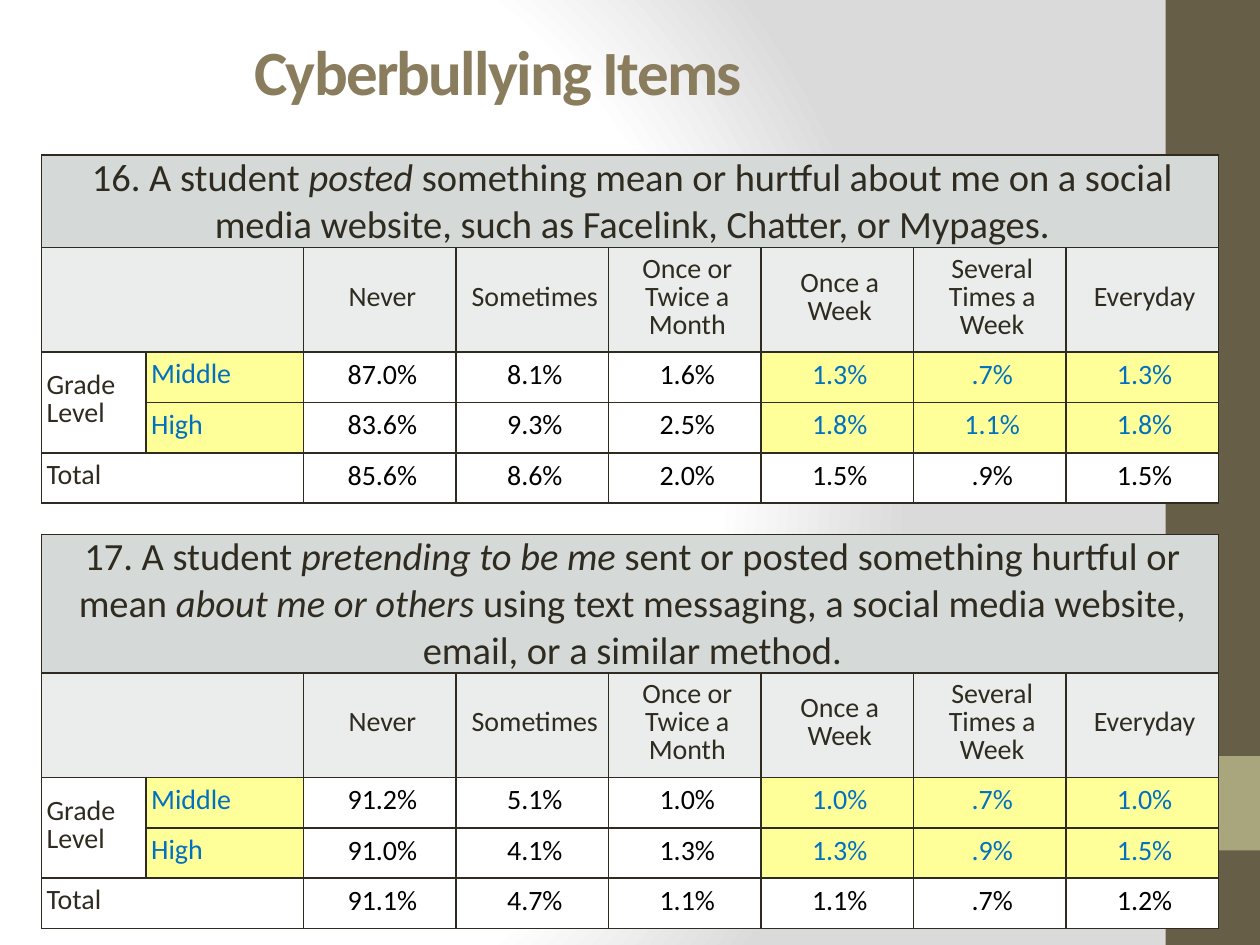
from dataclasses import dataclass
from typing import NamedTuple

from pptx import Presentation
from pptx.dml.color import RGBColor as Rgb
from pptx.enum.shapes import MSO_SHAPE as Shape
from pptx.enum.text import MSO_ANCHOR as Anchor, PP_ALIGN as Align
from pptx.oxml import parse_xml
from pptx.oxml.ns import nsdecls
from pptx.util import Inches, Pt


@dataclass(frozen=True)
class Theme:
    font: str = "Calibri"
    title_size: int = 36
    question_size: int = 22
    cell_size: int = 16
    ink: str = "2F2B20"
    black: str = "000000"
    blue: str = "0070C0"
    title: str = "897D5D"
    white: str = "FFFFFF"
    shade: str = "DADADA"
    yellow: str = "FFFF99"
    question_fill: str = "D5DAD8"
    header_fill: str = "EAEDEB"
    band: str = "675E47"
    accent: str = "A9A57C"


class Run(NamedTuple):
    text: str
    italic: bool = False


class Style(NamedTuple):
    fill: str
    color: str
    align: Align = Align.CENTER
    size: int = 16
    margin: float = 0
    fixed_lines: bool = True


class Survey(NamedTuple):
    top: float
    question_height: float
    question: list[Run]
    rates: list[list[str]]


THEME = Theme()
LEFT = 0.33
COLUMN_WIDTHS = [0.83, 1.25] + [1.21] * 6
BODY_HEIGHTS = [0.83, 0.4, 0.4, 0.4]
LABEL_COLUMNS = 2
FIRST_HIGHLIGHT = 3
FREQUENCIES = ["Never", "Sometimes", "Once or Twice a Month", "Once a Week",
               "Several Times a Week", "Everyday"]
QUESTION = Style(THEME.question_fill, THEME.ink, size=THEME.question_size, fixed_lines=False)
HEADER = Style(THEME.header_fill, THEME.ink)
LABEL = Style(THEME.white, THEME.ink, Align.LEFT)
GRADE = Style(THEME.yellow, THEME.blue, Align.LEFT)
RATE = Style(THEME.white, THEME.black, margin=0.01)
HIGHLIGHT = Style(THEME.yellow, THEME.blue, margin=0.01)

SURVEYS = [
    Survey(1.23, 0.72, [
        Run("16. A student "), Run("posted", True),
        Run(" something mean or hurtful about me on a social media website, "
            "such as Facelink, Chatter, or Mypages."),
    ], [
        ["87.0%", "8.1%", "1.6%", "1.3%", ".7%", "1.3%"],
        ["83.6%", "9.3%", "2.5%", "1.8%", "1.1%", "1.8%"],
        ["85.6%", "8.6%", "2.0%", "1.5%", ".9%", "1.5%"],
    ]),
    Survey(4.24, 1.09, [
        Run("17. A student "), Run("pretending to be me ", True),
        Run("sent or posted something hurtful or mean "), Run("about me or others ", True),
        Run("using text messaging, a social media website, email, or a similar method."),
    ], [
        ["91.2%", "5.1%", "1.0%", "1.0%", ".7%", "1.0%"],
        ["91.0%", "4.1%", "1.3%", "1.3%", ".9%", "1.5%"],
        ["91.1%", "4.7%", "1.1%", "1.1%", ".7%", "1.2%"],
    ]),
]


def set_background(slide) -> None:
    """Fill the slide with a circular gradient."""
    stops = "".join(
        f'<a:gs pos="{position}000"><a:srgbClr val="{color}"/></a:gs>'
        for position, color in [(0, THEME.white), (75, THEME.white), (100, THEME.shade)])
    slide.element.cSld.insert(0, parse_xml(
        f'<p:bg {nsdecls("p", "a")}><p:bgPr><a:gradFill rotWithShape="1"><a:gsLst>{stops}</a:gsLst>'
        '<a:path path="circle"><a:fillToRect l="20000" t="50000" r="100000" b="50000"/></a:path>'
        '</a:gradFill><a:effectLst/></p:bgPr></p:bg>'))


def add_block(slide, top: float, height: float, color: str) -> None:
    """Draw a plain rectangle in the right-hand band."""
    shape = slide.shapes.add_shape(
        Shape.RECTANGLE, Inches(9.25), Inches(top), Inches(0.75), Inches(height))
    shape.shadow.inherit = False
    shape.fill.solid()
    shape.fill.fore_color.rgb = Rgb.from_string(color)
    shape.line.fill.background()


def set_font(font, size: int, color: str) -> None:
    """Apply the theme font with a size and colour."""
    font.name = THEME.font
    font.size = Pt(size)
    font.color.rgb = Rgb.from_string(color)


def add_title(slide, text: str) -> None:
    """Write the slide title."""
    frame = slide.shapes.add_textbox(
        Inches(1.92), Inches(0.18), Inches(7.5), Inches(0.75)).text_frame
    frame.word_wrap = True
    frame.vertical_anchor = Anchor.MIDDLE
    paragraph = frame.paragraphs[0]
    run = paragraph.add_run()
    run.text = text
    set_font(paragraph.font, THEME.title_size, THEME.title)
    paragraph.font.bold = True
    run.font._element.set("spc", "-100")


def style_cell(cell, style: Style) -> None:
    """Give a cell its borders, fill and margins."""
    properties = cell._tc.get_or_add_tcPr()
    for side in ("lnL", "lnR", "lnT", "lnB"):
        properties.append(parse_xml(
            f'<a:{side} {nsdecls("a")} w="{Pt(1)}"><a:solidFill><a:srgbClr val="{THEME.ink}"/>'
            f'</a:solidFill></a:{side}>'))
    cell.fill.solid()
    cell.fill.fore_color.rgb = Rgb.from_string(style.fill)
    cell.vertical_anchor = Anchor.MIDDLE
    cell.margin_left = cell.margin_right = cell.margin_top = Inches(style.margin)
    cell.margin_bottom = 0


def write_cell(cell, runs: list[Run], style: Style) -> None:
    """Style a cell and write its runs."""
    style_cell(cell, style)
    paragraph = cell.text_frame.paragraphs[0]
    paragraph.alignment = style.align
    paragraph._p.get_or_add_pPr().set("marL", str(Inches(0.04)))
    if style.fixed_lines:
        paragraph.line_spacing = Pt(16)
    set_font(paragraph.font, style.size, style.color)
    for text, italic in runs:
        run = paragraph.add_run()
        run.text = text
        if italic:
            run.font.italic = True


def add_survey(slide, survey: Survey) -> None:
    """Draw one survey question with its table of rates."""
    heights = [survey.question_height] + BODY_HEIGHTS
    table = slide.shapes.add_table(
        len(heights), len(COLUMN_WIDTHS), Inches(LEFT), Inches(survey.top),
        Inches(sum(COLUMN_WIDTHS)), Inches(sum(heights))).table
    table.first_row = table.horz_banding = False
    for column, width in zip(table.columns, COLUMN_WIDTHS):
        column.width = Inches(width)
    for row, height in zip(table.rows, heights):
        row.height = Inches(height)

    labels = [
        [(survey.question, QUESTION)] + [([], QUESTION)] * 7,
        [([], HEADER)] * 2 + [([Run(name)], HEADER) for name in FREQUENCIES],
        [([Run("Grade Level")], LABEL), ([Run("Middle")], GRADE)],
        [([], LABEL), ([Run("High")], GRADE)],
        [([Run("Total")], LABEL), ([], LABEL)],
    ]
    for index, rates in enumerate(survey.rates):
        is_total = index == len(survey.rates) - 1
        labels[index + LABEL_COLUMNS] += [
            ([Run(rate)], HIGHLIGHT if column >= FIRST_HIGHLIGHT and not is_total else RATE)
            for column, rate in enumerate(rates)]
    for row, entries in enumerate(labels):
        for column, (runs, style) in enumerate(entries):
            write_cell(table.cell(row, column), runs, style)
    for start, end in [((0, 0), (0, 7)), ((1, 0), (1, 1)), ((2, 0), (3, 0)), ((4, 0), (4, 1))]:
        table.cell(*start).merge(table.cell(*end))


def main() -> None:
    """Build and save the slide."""
    presentation = Presentation()
    presentation.slide_width, presentation.slide_height = Inches(10), Inches(7.5)
    slide = presentation.slides.add_slide(presentation.slide_layouts[6])
    set_background(slide)
    add_block(slide, 0, 7.5, THEME.band)
    add_block(slide, 6, 0.75, THEME.accent)
    add_title(slide, "Cyberbullying Items")
    for survey in SURVEYS:
        add_survey(slide, survey)
    presentation.save("out.pptx")


if __name__ == "__main__":
    main()
